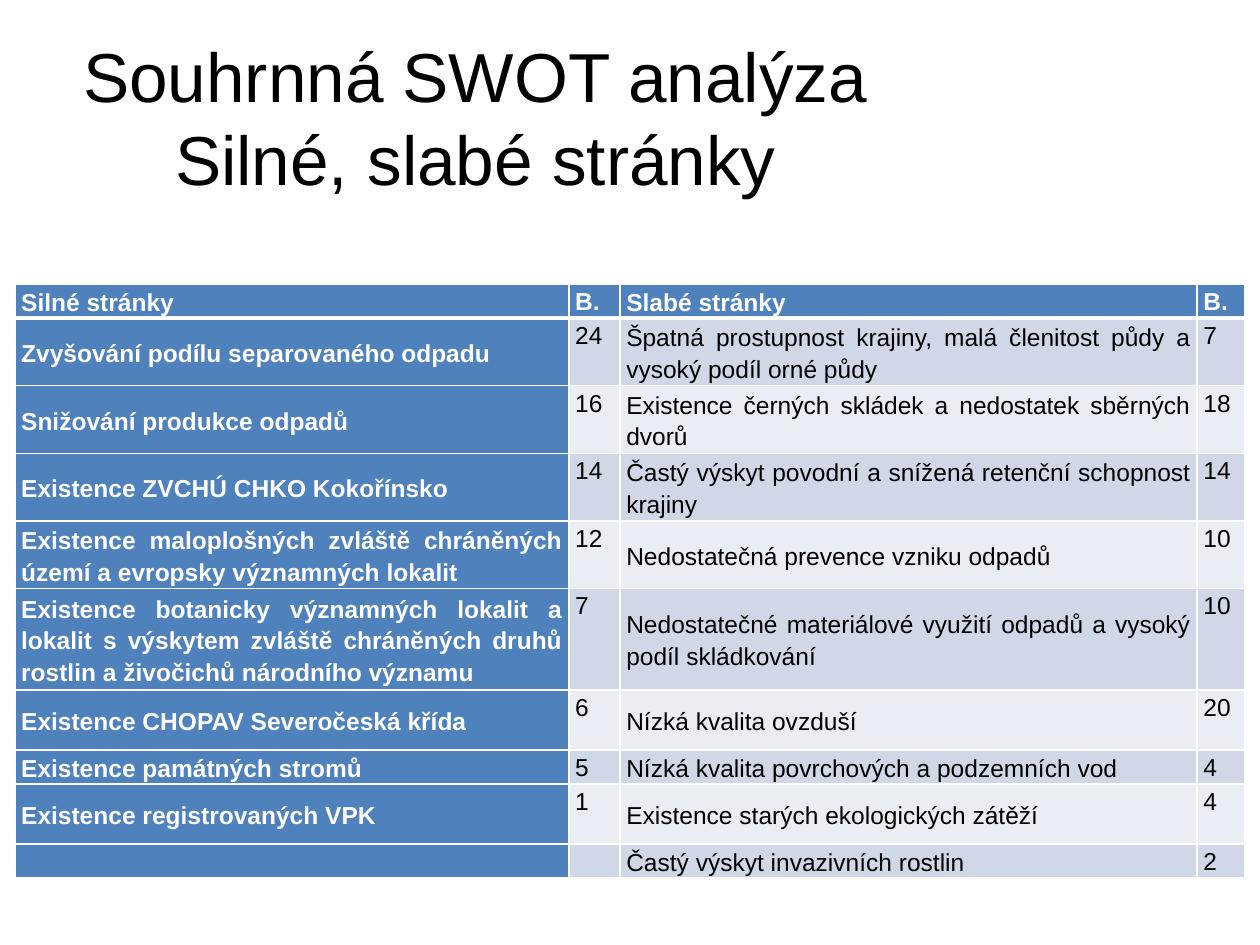
from dataclasses import dataclass
from lxml.etree import SubElement
from pptx import Presentation
from pptx.dml.color import RGBColor as RGB
from pptx.enum.text import MSO_ANCHOR as Anchor, PP_ALIGN as Align
from pptx.oxml.ns import qn
from pptx.util import Pt


@dataclass(frozen=True)
class Theme:
    font: str = "Arial"
    title: float = 39.6
    body: float = 14
    ink: str = "000000"
    white: str = "FFFFFF"
    head: str = "4F81BD"
    bands: tuple = ("E9EDF4", "D0D8E8")


THEME = Theme()
COLS = (316.6, 29.2, 329.8, 27.4)
LOW, MID, PAIR, TRIO = 19.2, 34.4, 36.2, 54.3
ROWS = [
    (LOW, "Silné stránky", "B.", "Slabé stránky", "B."),
    (PAIR, "Zvyšování podílu separovaného odpadu", "24",
     "Špatná prostupnost krajiny, malá členitost půdy a vysoký podíl orné půdy", "7"),
    (PAIR, "Snižování produkce odpadů", "16",
     "Existence černých skládek a nedostatek sběrných dvorů", "18"),
    (PAIR, "Existence ZVCHÚ CHKO Kokořínsko", "14",
     "Častý výskyt povodní a snížená retenční schopnost krajiny", "14"),
    (PAIR, "Existence maloplošných zvláště chráněných území a evropsky významných lokalit", "12",
     "Nedostatečná prevence vzniku odpadů", "10"),
    (TRIO, "Existence botanicky významných lokalit a lokalit s výskytem zvláště chráněných "
     "druhů rostlin a živočichů národního významu", "7",
     "Nedostatečné materiálové využití odpadů a vysoký podíl skládkování", "10"),
    (MID, "Existence CHOPAV Severočeská křída", "6", "Nízká kvalita ovzduší", "20"),
    (LOW, "Existence památných stromů", "5", "Nízká kvalita povrchových a podzemních vod", "4"),
    (MID, "Existence registrovaných VPK", "1", "Existence starých ekologických zátěží", "4"),
    (LOW, "", "", "Častý výskyt invazivních rostlin", "2"),
]


def set_font(para, size, color, bold=False):
    font = para.font
    font.name, font.size, font.bold = THEME.font, Pt(size), bold
    font.color.rgb = RGB.from_string(color)


def add_title(slide, left, top, width, height):
    frame = slide.shapes.add_textbox(Pt(left), Pt(top), Pt(width), Pt(height)).text_frame
    frame.word_wrap = True
    frame.vertical_anchor = Anchor.MIDDLE
    para = frame.paragraphs[0]
    para.text = "Souhrnná SWOT analýza\vSilné, slabé stránky"
    para.alignment = Align.CENTER
    set_font(para, THEME.title, THEME.ink)


def add_edges(cell, row):
    props = cell._tc.get_or_add_tcPr()
    widths = {"L": 1, "R": 1, "T": 3 if row == 1 else 1, "B": 3 if row == 0 else 1}
    for side, width in widths.items():
        line = SubElement(props, qn(f"a:ln{side}"), w=str(Pt(width)))
        fill = SubElement(line, qn("a:solidFill"))
        SubElement(fill, qn("a:srgbClr"), val=THEME.white)


def fill_cell(cell, text, row, col):
    lead = row == 0 or col == 0
    add_edges(cell, row)
    cell.fill.solid()
    cell.fill.fore_color.rgb = RGB.from_string(THEME.head if lead else THEME.bands[row % 2])
    cell.margin_left = cell.margin_right = Pt(3.6)
    cell.margin_top = cell.margin_bottom = 0
    cell.vertical_anchor = Anchor.TOP if col % 2 else Anchor.MIDDLE
    para = cell.text_frame.paragraphs[0]
    para.text = text
    para.alignment = Align.JUSTIFY
    para.line_spacing = 1.15
    set_font(para, THEME.body, THEME.white if lead else THEME.ink, lead)


def add_grid(slide, left, top):
    width, height = sum(COLS), sum(row[0] for row in ROWS)
    table = slide.shapes.add_table(
        len(ROWS), len(COLS), Pt(left), Pt(top), Pt(width), Pt(height)).table
    table.first_col = True
    for col, size in enumerate(COLS):
        table.columns[col].width = Pt(size)
    for row, (size, *texts) in enumerate(ROWS):
        table.rows[row].height = Pt(size)
        for col, text in enumerate(texts):
            fill_cell(table.cell(row, col), text, row, col)


def main():
    deck = Presentation()
    deck.slide_width, deck.slide_height = Pt(720), Pt(540)
    slide = deck.slides.add_slide(deck.slide_layouts[6])
    add_title(slide, 36, 21.6, 471.4, 90)
    add_grid(slide, 8.5, 162.4)
    deck.save("out.pptx")


if __name__ == "__main__":
    main()
